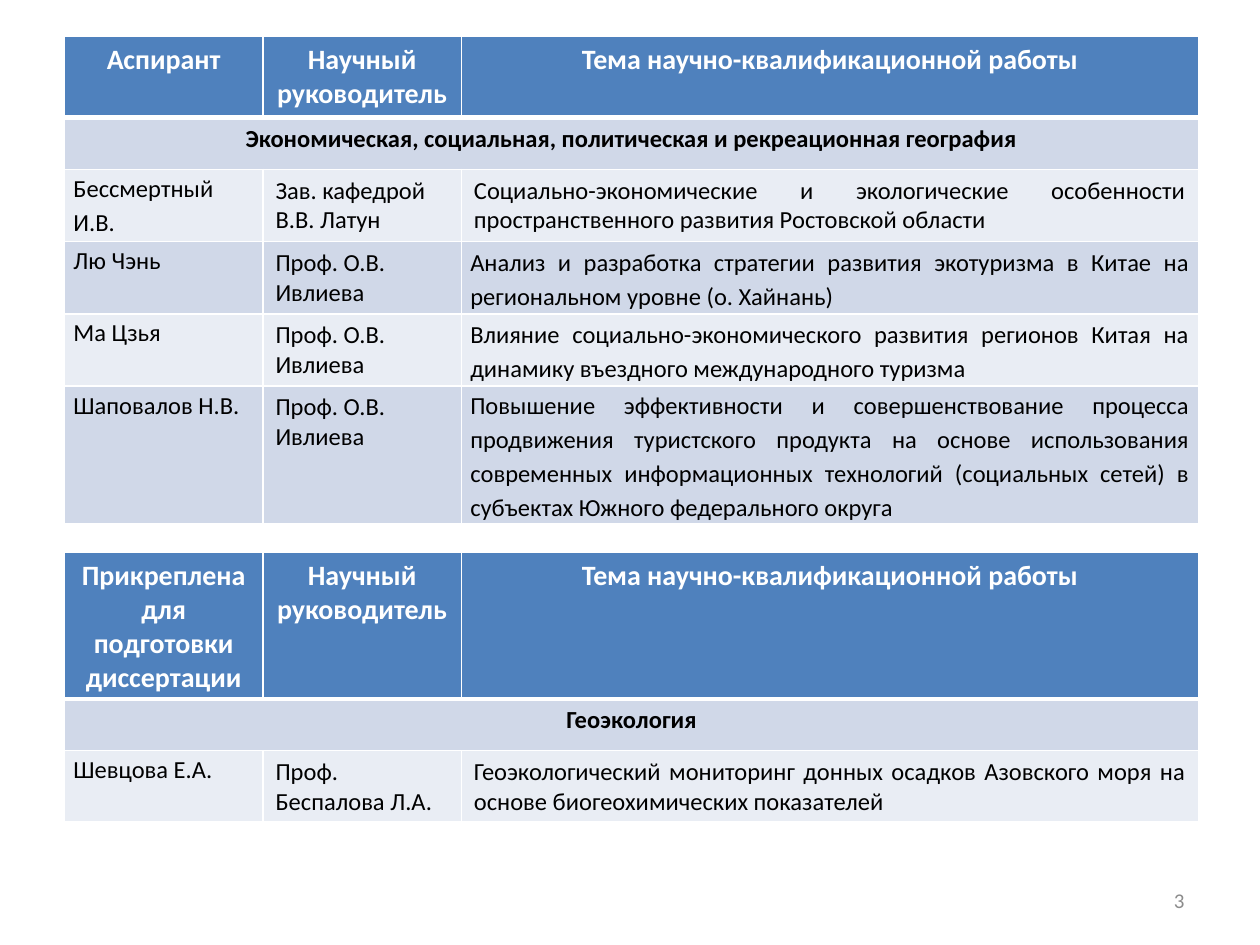
from lxml import etree
from pptx import Presentation
from pptx.dml.color import RGBColor
from pptx.enum.text import MSO_ANCHOR, PP_ALIGN
from pptx.oxml.ns import qn
from pptx.util import Cm, Pt

LEFT, CENTER, RIGHT, JUSTIFY = PP_ALIGN.LEFT, PP_ALIGN.CENTER, PP_ALIGN.RIGHT, PP_ALIGN.JUSTIFY
TOP, MIDDLE = MSO_ANCHOR.TOP, MSO_ANCHOR.MIDDLE

COLORS = {
    "header": "4F81BD",
    "dark_band": "D0D8E8",
    "light_band": "E9EDF4",
    "white": "FFFFFF",
    "text": "000000",
    "number": "8C8C8C",
}
COLUMN_WIDTHS = (4, 4, 14.86)
ROW_HEIGHT = 1.04
TABLE_LEFT = 1.3
SUPERVISOR = "Научный руководитель"
TOPIC = "Тема научно-квалификационной работы"

POSTGRADUATES = [
    ("Бессмертный И.В.", "Зав. кафедрой В.В. Латун",
     "Социально-экономические и экологические особенности "
     "пространственного развития Ростовской области"),
    ("Лю Чэнь", "Проф. О.В. Ивлиева",
     "Анализ и разработка стратегии развития экотуризма в Китае "
     "на региональном уровне (о. Хайнань)"),
    ("Ма Цзья", "Проф. О.В. Ивлиева",
     "Влияние социально-экономического развития регионов Китая "
     "на динамику въездного международного туризма"),
    ("Шаповалов Н.В.", "Проф. О.В. Ивлиева",
     "Повышение эффективности и совершенствование процесса продвижения "
     "туристского продукта на основе использования современных "
     "информационных технологий (социальных сетей) в субъектах "
     "Южного федерального округа"),
]
ATTACHED = [
    ("Шевцова Е.А.", "Проф. Беспалова Л.А.",
     "Геоэкологический мониторинг донных осадков Азовского моря "
     "на основе биогеохимических показателей"),
]


class SlideBuilder:
    font_name = "Calibri"

    def __init__(self, slide):
        self.slide = slide

    def set_text(self, frame, text, size, color, align, bold=False, spacing=None):
        paragraph = frame.paragraphs[0]
        paragraph.text = text
        paragraph.alignment = align
        if spacing:
            paragraph.line_spacing = spacing
        paragraph.font.name = self.font_name
        paragraph.font.size = Pt(size)
        paragraph.font.bold = bold
        paragraph.font.color.rgb = RGBColor.from_string(COLORS[color])

    def paint(self, cell, fill, top=1, bottom=1):
        properties = cell._tc.get_or_add_tcPr()
        for side, width in (("L", 1), ("R", 1), ("T", top), ("B", bottom)):
            border = etree.SubElement(properties, qn(f"a:ln{side}"), w=str(Pt(width)))
            solid = etree.SubElement(border, qn("a:solidFill"))
            etree.SubElement(solid, qn("a:srgbClr"), val=COLORS["white"])
        cell.fill.solid()
        cell.fill.fore_color.rgb = RGBColor.from_string(COLORS[fill])

    def tighten(self, cell):
        cell.margin_left = cell.margin_right = Cm(0.18)
        cell.margin_top = cell.margin_bottom = 0

    def table(self, top, first_heading, section, people):
        row_count = len(people) + 2
        table = self.slide.shapes.add_table(
            row_count, len(COLUMN_WIDTHS), Cm(TABLE_LEFT), Cm(top),
            Cm(sum(COLUMN_WIDTHS)), Cm(ROW_HEIGHT * row_count)).table
        for column, width in zip(table.columns, COLUMN_WIDTHS):
            column.width = Cm(width)

        for index, heading in enumerate((first_heading, SUPERVISOR, TOPIC)):
            cell = table.cell(0, index)
            self.paint(cell, "header", bottom=3)
            self.set_text(cell.text_frame, heading, 16, "white", CENTER, bold=True)
            self.paint(table.cell(1, index), "dark_band", top=3)

        section_cell = table.cell(1, 0)
        section_cell.merge(table.cell(1, len(COLUMN_WIDTHS) - 1))
        self.set_text(section_cell.text_frame, section, 14, "text", CENTER, bold=True)

        for order, person in enumerate(people):
            band = "dark_band" if order % 2 else "light_band"
            for index, text in enumerate(person):
                cell = table.cell(order + 2, index)
                self.paint(cell, band)
                is_topic = index == 2
                tight = index == 0 or (is_topic and order > 0)
                if tight:
                    self.tighten(cell)
                cell.vertical_anchor = MIDDLE if tight and is_topic else TOP
                self.set_text(cell.text_frame, text, 14, "text",
                              JUSTIFY if is_topic else LEFT,
                              spacing=1.15 if tight else None)

    def page_number(self, number):
        frame = self.slide.shapes.add_textbox(
            Cm(18.2), Cm(17.65), Cm(5.93), Cm(1.01)).text_frame
        frame.word_wrap = True
        frame.vertical_anchor = MIDDLE
        self.set_text(frame, str(number), 12, "number", RIGHT)


def main():
    presentation = Presentation()
    presentation.slide_width = Cm(25.4)
    presentation.slide_height = Cm(19.05)
    builder = SlideBuilder(presentation.slides.add_slide(presentation.slide_layouts[6]))
    builder.table(0.74, "Аспирант",
                  "Экономическая, социальная, политическая и рекреационная география",
                  POSTGRADUATES)
    builder.page_number(3)
    builder.table(11.13, "Прикреплена для подготовки диссертации", "Геоэкология", ATTACHED)
    presentation.save("out.pptx")


if __name__ == "__main__":
    main()
